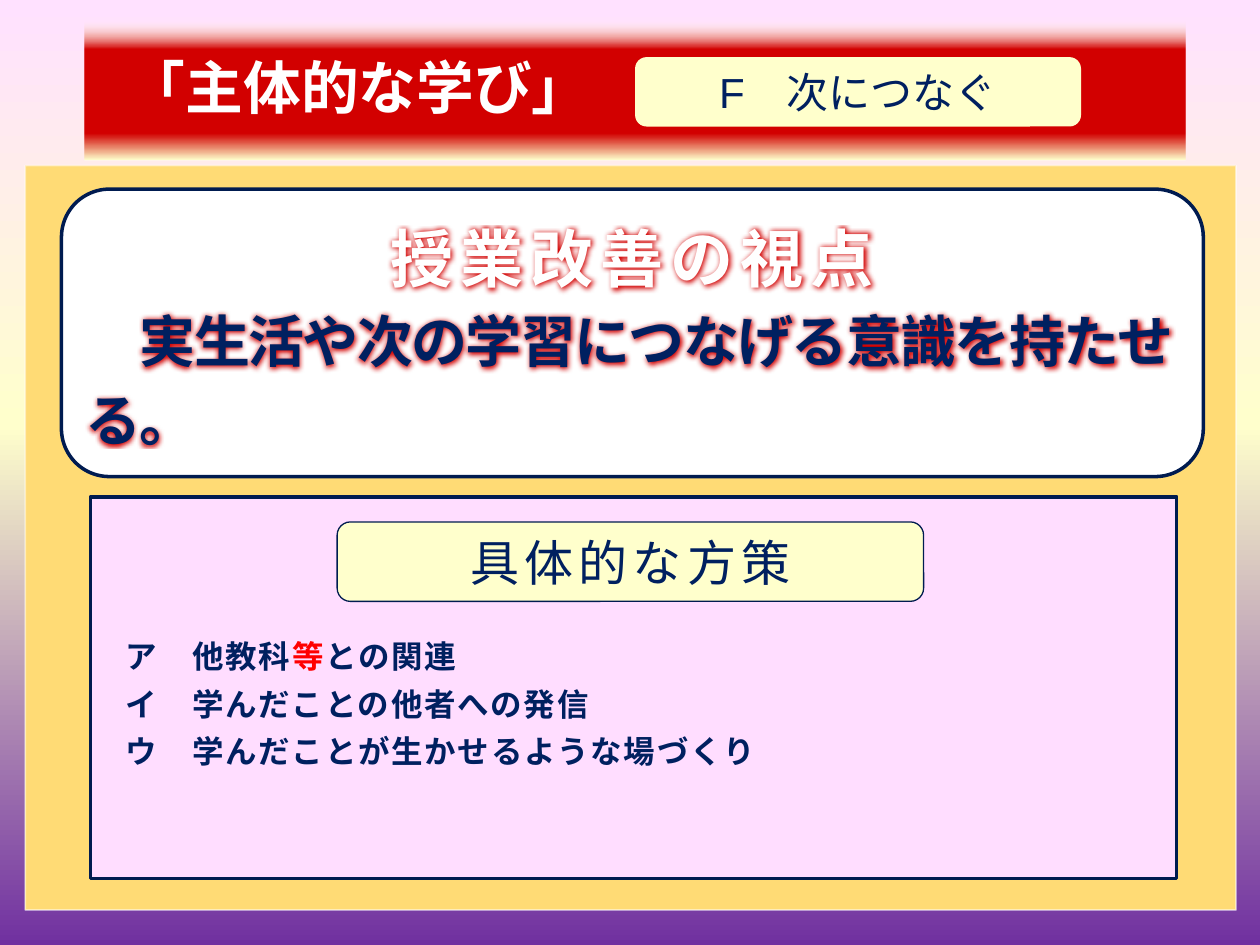
from lxml import etree
from pptx import Presentation
from pptx.dml.color import RGBColor
from pptx.enum.shapes import MSO_SHAPE
from pptx.enum.text import MSO_ANCHOR, PP_ALIGN
from pptx.oxml.ns import qn
from pptx.util import Inches, Pt

RECT, ROUND = MSO_SHAPE.RECTANGLE, MSO_SHAPE.ROUNDED_RECTANGLE
TOP, MIDDLE = MSO_ANCHOR.TOP, MSO_ANCHOR.MIDDLE
LEFT, CENTER = PP_ALIGN.LEFT, PP_ALIGN.CENTER

WHITE = RGBColor(0xFF, 0xFF, 0xFF)
CREAM = RGBColor(0xFF, 0xFF, 0xCC)
PINK = RGBColor(0xFF, 0xE1, 0xFF)
PALE_PINK = RGBColor(0xFF, 0xDD, 0xFF)
PURPLE = RGBColor(0x70, 0x30, 0xA0)
GOLD = RGBColor(0xFF, 0xDB, 0x75)
CRIMSON = RGBColor(0xD2, 0x00, 0x00)
RED = RGBColor(0xFF, 0x00, 0x00)
NAVY = RGBColor(0x00, 0x20, 0x60)
BORDER = RGBColor(0x00, 0x1B, 0x50)
JP = "Noto Sans CJK JP"


def within(box, x, y, w, h):
    """Box given in percent of an outer box."""
    left, top, width, height = box
    return (int(left + width * x / 100), int(top + height * y / 100),
            int(width * w / 100), int(height * h / 100))


def add_color(parent, color, alpha=100):
    clr = etree.SubElement(parent, qn("a:srgbClr"), val=str(color))
    if alpha < 100:
        etree.SubElement(clr, qn("a:alpha"), val=str(alpha * 1000))


def set_gradient(fill, root, stops):
    """Vertical gradient from (percent, colour, alpha) stops."""
    fill.gradient()
    grad = root.find(".//" + qn("a:gradFill"))
    for child in list(grad):
        grad.remove(child)
    gs_list = etree.SubElement(grad, qn("a:gsLst"))
    for pos, color, alpha in stops:
        gs = etree.SubElement(gs_list, qn("a:gs"), pos=str(pos * 1000))
        add_color(gs, color, alpha)
    etree.SubElement(grad, qn("a:lin"), ang="5400000", scaled="0")


def add_effects(r, shadow):
    """Red glow behind a run, with a shadow below it if asked."""
    effects = etree.Element(qn("a:effectLst"))
    glow = etree.SubElement(effects, qn("a:glow"), rad=str(Pt(4)))
    add_color(glow, CRIMSON)
    if shadow:
        shade = etree.SubElement(effects, qn("a:outerShdw"), blurRad=str(Pt(3)),
                                 dist=str(Pt(3)), dir="5400000")
        add_color(shade, CRIMSON)
    r.font._element.find(qn("a:solidFill")).addnext(effects)


def add_text(p, text, size, font="Arial", color=NAVY, bold=False, spacing=0,
             align=LEFT, line=None, glow=False, shadow=False):
    p.alignment = align
    if line:
        p.line_spacing = line
    r = p.add_run()
    r.text = text
    r.font.size, r.font.bold, r.font.name = Pt(size), bold, font
    r.font.color.rgb = color
    r_pr = r.font._element
    r_pr.set("spc", str(spacing * 100))
    r_pr.find(qn("a:latin")).addnext(etree.Element(qn("a:ea"), typeface=JP))
    if glow:
        add_effects(r, shadow)


def set_frame(sp, insets=(0.1, 0.05, 0.1, 0.05), anchor=MIDDLE):
    tf = sp.text_frame
    tf.word_wrap, tf.vertical_anchor = True, anchor
    tf.margin_left, tf.margin_top, tf.margin_right, tf.margin_bottom = map(Inches, insets)
    return tf


def add_box(slide, kind, box, fill, line=None, width=1):
    sp = slide.shapes.add_shape(kind, *box)
    sp.shadow.inherit = False
    sp.fill.solid()
    sp.fill.fore_color.rgb = fill
    if line is None:
        sp.line.fill.background()
    else:
        sp.line.color.rgb, sp.line.width = line, Pt(width)
    return sp


def add_label(slide, box, text, size, spacing=0, line=None):
    sp = add_box(slide, ROUND, box, CREAM, line, 0.75)
    add_text(set_frame(sp).paragraphs[0], text, size, spacing=spacing, align=CENTER)


def add_banner(slide, box):
    title = slide.shapes.title
    title.left, title.top, title.width, title.height = box
    set_gradient(title.fill, title.element,
                 [(0, CREAM, 0), (20, CRIMSON, 100), (80, CRIMSON, 100),
                  (99, CREAM, 100), (100, WHITE, 0)])
    tf = set_frame(title, (0.24, 0.05, 0.1, 0.05))
    add_text(tf.paragraphs[0], "\u3000「主体的な学び」".replace("\u3000", " "), 33,
             font="Calibri", color=WHITE, bold=True, line=0.9)
    add_label(slide, within(box, 50, 25.5, 40.5, 50), "F　次につなぐ", 24)


def add_viewpoint(slide, box):
    sp = add_box(slide, ROUND, box, WHITE, BORDER, 2)
    tf = set_frame(sp, (0.08, 0, 0.08, 0.05))
    add_text(tf.paragraphs[0], "授業改善の視点", 36, color=WHITE, bold=True,
             spacing=4, align=CENTER, line=Pt(50), glow=True)
    add_text(tf.add_paragraph(), "　実生活や次の学習につなげる意識を持たせる。", 32,
             font=JP, bold=True, spacing=-1, line=Pt(45), glow=True, shadow=True)


def add_measures(slide, box):
    sp = add_box(slide, RECT, box, PALE_PINK, BORDER, 2)
    tf = set_frame(sp, (0.28, 1.04, 0.1, 0.05), TOP)
    items = [
        [("ア　他教科", NAVY), ("等", RED), ("との関連", NAVY)],
        [("イ　学んだことの他者への発信", NAVY)],
        [("ウ　学んだことが生かせるような場づくり", NAVY)],
    ]
    for i, item in enumerate(items):
        p = tf.add_paragraph() if i else tf.paragraphs[0]
        for text, color in item:
            add_text(p, text, 18, font=JP, color=color, bold=True, spacing=1, line=Pt(27))
    add_label(slide, within(box, 22.7, 6.6, 54, 20.8), "具体的な方策", 28,
              spacing=3, line=BORDER)


def add_panel(slide, box):
    sp = add_box(slide, RECT, box, GOLD, WHITE, 1)
    line_color = sp.line._ln.find(".//" + qn("a:srgbClr"))
    etree.SubElement(line_color, qn("a:alpha"), val="50000")
    add_viewpoint(slide, within(box, 3, 3.2, 94.3, 38.6))
    add_measures(slide, within(box, 5.4, 44.5, 89.7, 51.3))


def main():
    prs = Presentation()
    prs.slide_width, prs.slide_height = Inches(10), Inches(7.5)
    slide = prs.slides.add_slide(prs.slide_layouts[5])
    set_gradient(slide.background.fill, slide.element,
                 [(0, PINK, 100), (45, CREAM, 100), (100, PURPLE, 100)])
    page = (0, 0, prs.slide_width, prs.slide_height)
    add_banner(slide, within(page, 6.7, 2.3, 87.4, 14.7))
    add_panel(slide, within(page, 2, 17.5, 96.1, 78.8))
    prs.save("out.pptx")


if __name__ == "__main__":
    main()
